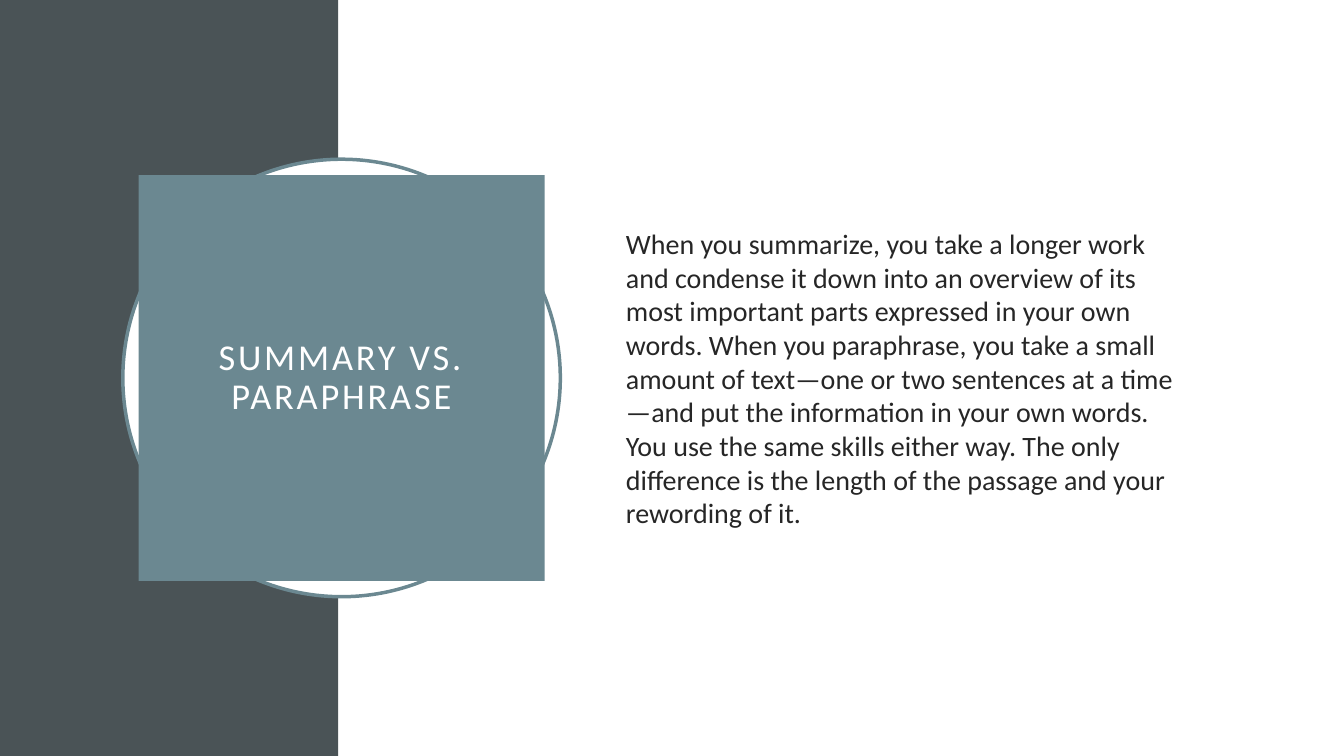
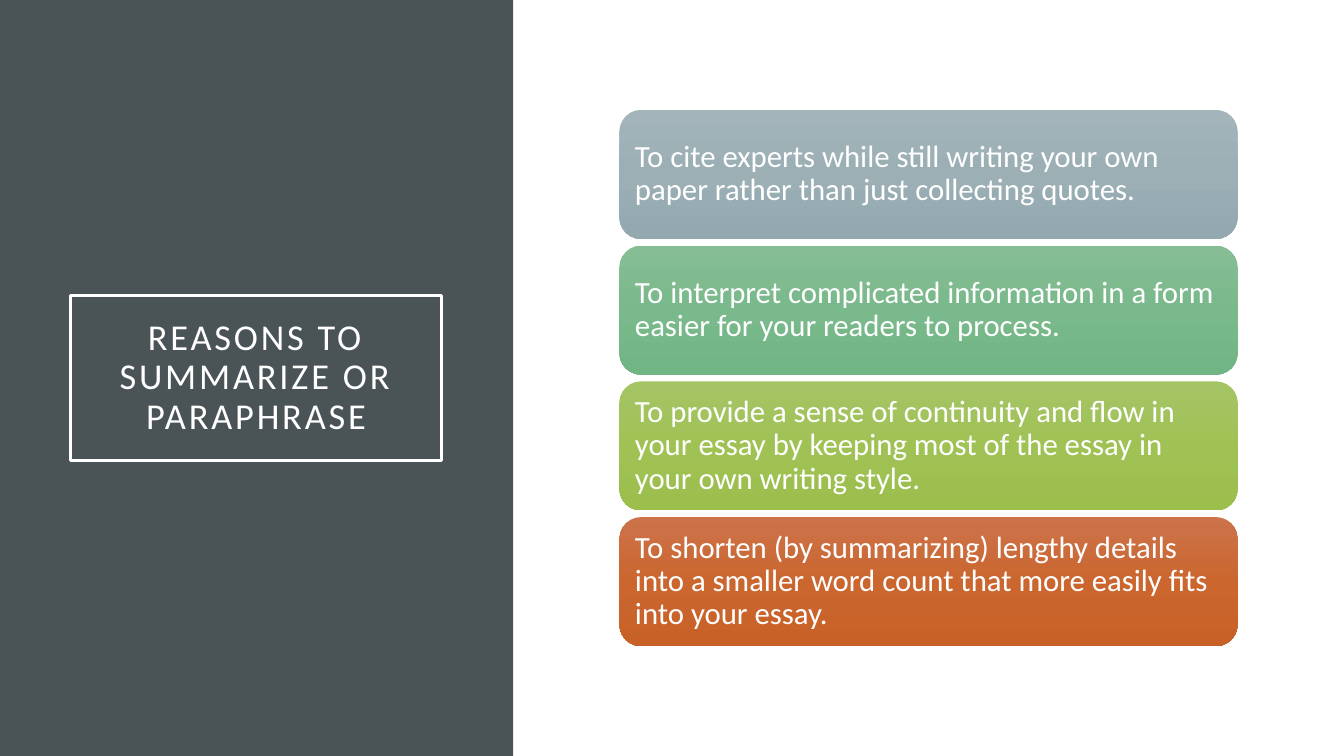
from copy import deepcopy

from pptx import Presentation
from pptx.dml.color import RGBColor
from pptx.enum import shapes, text
from pptx.oxml.ns import qn
from pptx.util import Pt

FONT = "Calibri"
SLATE = RGBColor(0x4A, 0x53, 0x56)
TEAL = RGBColor(0x6B, 0x88, 0x91)
WHITE = RGBColor(0xFF, 0xFF, 0xFF)
INK = RGBColor(0x26, 0x26, 0x26)

SLIDE_W, SLIDE_H = 960, 540
OUTLINE = 2.5

DEFINITION = (
    "When you summarize, you take a longer work and condense it down into an "
    "overview of its most important parts expressed in your own words. When you "
    "paraphrase, you take a small amount of text—one or two sentences at a time—and "
    "put the information in your own words. You use the same skills either way. The "
    "only difference is the length of the passage and your rewording of it."
)

# Each reason with its gradient, from top to bottom
REASONS = [
    ("To cite experts while still writing your own paper rather than just "
     "collecting quotes.", ("A3B5BB", "9BAFB5", "93A9AF")),
    ("To interpret complicated information in a form easier for your readers to "
     "process.", ("86BD95", "7AB98B", "72B584")),
    ("To provide a sense of continuity and flow in your essay by keeping most of "
     "the essay in your own writing style.", ("A5C466", "A0C255", "9BBE4D")),
    ("To shorten (by summarizing) lengthy details into a smaller word count that "
     "more easily fits into your essay.", ("CC734B", "CB662F", "C86128")),
]


def add_box(s, kind, x, y, w, h, fill=None, line=None):
    """Add a preset shape with a plain fill and outline, or none."""
    sp = s.shapes.add_shape(kind, Pt(x), Pt(y), Pt(w), Pt(h))
    sp.shadow.inherit = False
    if fill is None:
        sp.fill.background()
    else:
        sp.fill.solid()
        sp.fill.fore_color.rgb = fill
    if line is None:
        sp.line.fill.background()
    else:
        sp.line.color.rgb = line
        sp.line.width = Pt(OUTLINE)
    return sp


def set_text(sp, words, size, color, align=text.PP_ALIGN.LEFT, inset=7.2,
             inset_y=None, leading=1.0, before=0, tracking=0):
    """Write one vertically centred paragraph into a shape."""
    tf = sp.text_frame
    tf.word_wrap = True
    tf.vertical_anchor = text.MSO_ANCHOR.MIDDLE
    tf.margin_left = tf.margin_right = Pt(inset)
    tf.margin_top = tf.margin_bottom = Pt(inset if inset_y is None else inset_y)
    p = tf.paragraphs[0]
    p.alignment = align
    p.line_spacing = leading
    p.space_before = Pt(before)
    r = p.add_run()
    r.text = words
    r.font.name = FONT
    r.font.size = Pt(size)
    r.font.color.rgb = color
    if tracking:
        r.font._element.set("spc", str(tracking * 100))


def set_gradient(sp, colors):
    """Fill a shape with evenly spaced colours running downwards."""
    sp.fill.gradient()
    sp.fill.gradient_angle = 270
    stops = sp._element.spPr.find(".//" + qn("a:gsLst"))
    while len(stops) < len(colors):
        stops.append(deepcopy(stops[0]))
    for i, (stop, color) in enumerate(zip(sp.fill.gradient_stops, colors)):
        stop.position = i / (len(colors) - 1)
        stop.color.rgb = RGBColor.from_string(color)


def add_band(s, width):
    add_box(s, shapes.MSO_SHAPE.RECTANGLE, 0, 0, width, SLIDE_H, fill=SLATE)


def add_title(s, words, x, y, w, h, fill=None, line=None):
    sp = add_box(s, shapes.MSO_SHAPE.RECTANGLE, x, y, w, h, fill, line)
    set_text(sp, words, 26, WHITE, align=text.PP_ALIGN.CENTER, inset=14.4,
             leading=0.9, tracking=2)


def add_badge(s, words, cx, cy, side):
    """Square title over a slightly larger outlined circle."""
    ring = side + 22.5
    add_box(s, shapes.MSO_SHAPE.OVAL, cx - ring / 2, cy - ring / 2, ring, ring,
            fill=WHITE, line=TEAL)
    add_title(s, words, cx - side / 2, cy - side / 2, side, side, fill=TEAL)


def add_body(s, words, x, y, w, h):
    tb = s.shapes.add_textbox(Pt(x), Pt(y), Pt(w), Pt(h))
    set_text(tb, words, 20, INK, inset_y=3.6, before=10)


def add_cards(s, items, x, y, w, h, gap):
    """Stack equal rounded cards to fill the given box."""
    card_h = (h - gap * (len(items) - 1)) / len(items)
    for i, (words, colors) in enumerate(items):
        sp = add_box(s, shapes.MSO_SHAPE.ROUNDED_RECTANGLE,
                     x, y + i * (card_h + gap), w, card_h)
        set_gradient(sp, colors)
        set_text(sp, words, 22, WHITE, inset=6.6, leading=0.9)


def definition_slide(s):
    add_band(s, 241.5)
    add_badge(s, "SUMMARY VS. PARAPHRASE", 244, SLIDE_H / 2, 290)
    add_body(s, DEFINITION, 440, 110.5, 419, 319)


def reasons_slide(s):
    add_band(s, 366.5)
    add_title(s, "REASONS TO SUMMARIZE OR PARAPHRASE", 50.5, 211, 265, 118,
              line=WHITE)
    add_cards(s, REASONS, 442.5, 78.5, 441.5, 383, gap=4.8)


def main():
    prs = Presentation()
    prs.slide_width, prs.slide_height = Pt(SLIDE_W), Pt(SLIDE_H)
    blank = prs.slide_layouts[6]
    for build in (definition_slide, reasons_slide):
        build(prs.slides.add_slide(blank))
    prs.save("out.pptx")


if __name__ == "__main__":
    main()
